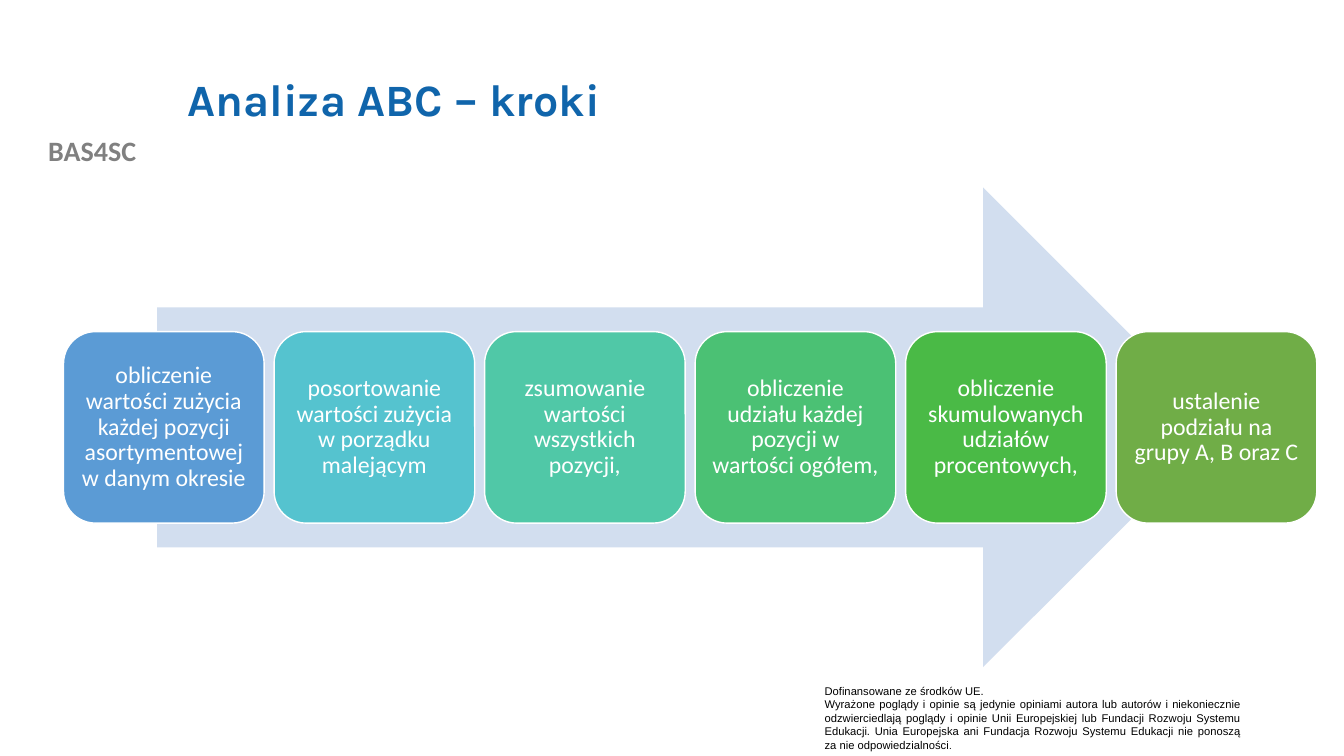
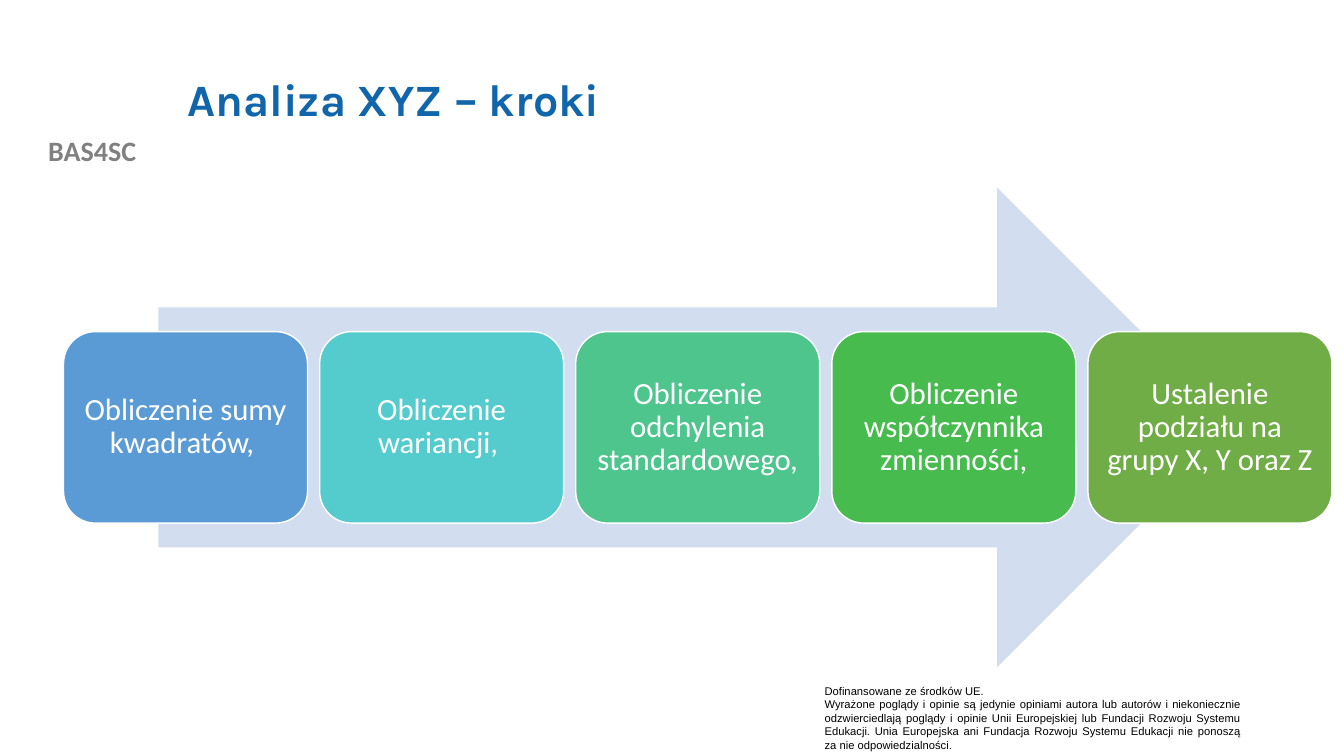
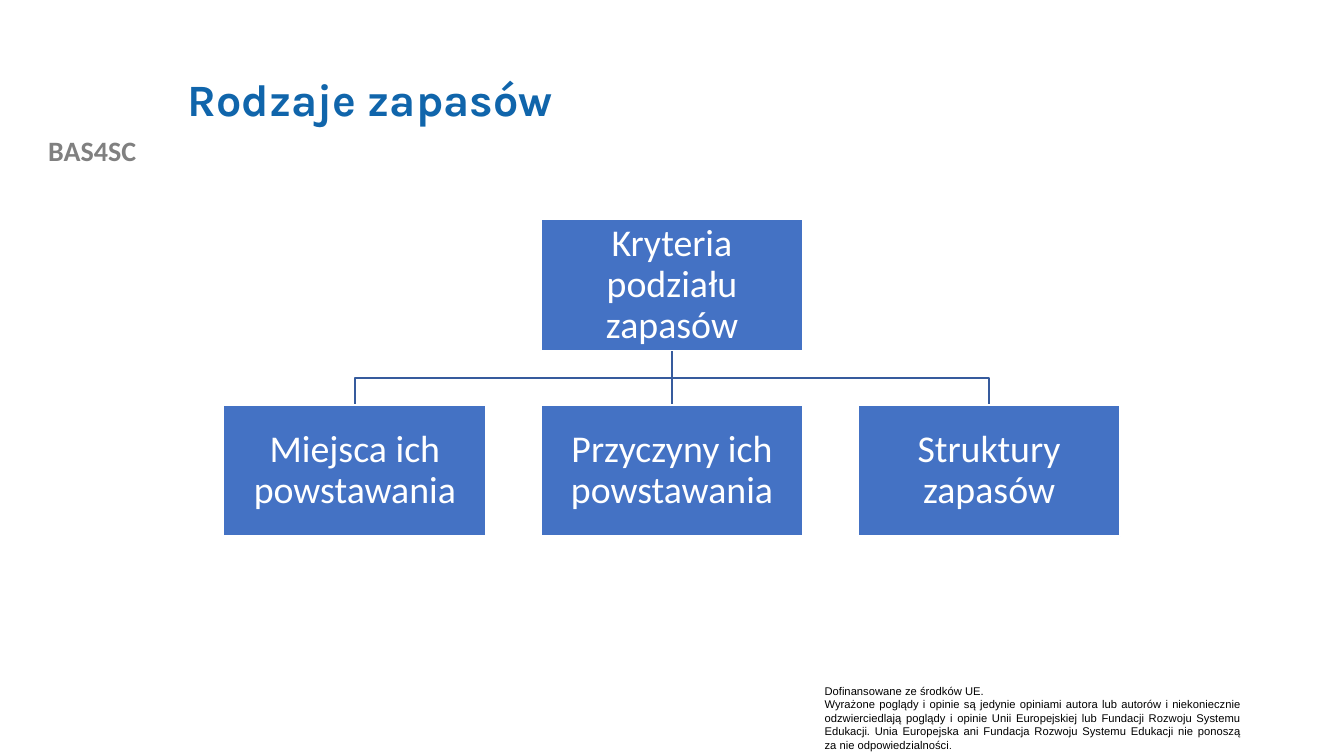
from lxml import etree
from pptx import Presentation
from pptx import util as u
from pptx.dml.color import RGBColor
from pptx.enum import shapes, text
from pptx.oxml.ns import qn

PX = 9144  # 100 px to the inch
WHITE, BLACK, GREY = "FFFFFF", "000000", "808080"
TITLE_BLUE, ARROW_BLUE, BOX_BLUE, LINE_BLUE = "1065AB", "D2DEEF", "4472C4", "365B9D"

PROJECT = "BAS4SC"
DISCLAIMER = [
    [("Dofinansowane ze środków UE.", 8)],
    [("Wyrażone poglądy i opinie są jedynie opiniami autora lub autorów i "
      "niekoniecznie odzwierciedlają poglądy i opinie Unii Europejskiej lub "
      "Fundacji Rozwoju Systemu Edukacji. Unia Europejska ani Fundacja Rozwoju "
      "Systemu Edukacji nie ponoszą za nie odpowiedzialności", 8), (".", 7)],
]

PROCESSES = [
    {
        "title": "Analiza ABC – kroki",
        "arrow": (156, 186, 1057, 476),
        "lefts": (63, 1107), "width": 199, "size": 17, "inset": 7,
        "steps": [
            ("obliczenie wartości zużycia każdej pozycji asortymentowej w danym okresie", "5B9BD5"),
            ("posortowanie wartości zużycia w porządku malejącym", "55C3CF"),
            ("zsumowanie wartości wszystkich pozycji,", "50C8A7"),
            ("obliczenie udziału każdej pozycji w wartości ogółem,", "4BC174"),
            ("obliczenie skumulowanych udziałów procentowych,", "4ABA46"),
            ("ustalenie podziału na grupy A, B oraz C", "70AD47"),
        ],
    },
    {
        "title": "Analiza XYZ – kroki",
        "arrow": (157, 186, 1070, 476),
        "lefts": (63, 1079), "width": 242, "size": 22, "inset": 9,
        "steps": [
            ("Obliczenie sumy kwadratów, ", "5B9BD5"),
            ("Obliczenie wariancji, ", "54CCCD"),
            ("Obliczenie odchylenia standardowego,", "4DC58D"),
            ("Obliczenie współczynnika zmienności,", "48BB4F"),
            ("Ustalenie podziału na grupy X, Y oraz Z", "70AD47"),
        ],
    },
]

TREE_TITLE = "Rodzaje zapasów"
TREE_ROOT = "Kryteria podziału zapasów"
TREE_LEAVES = ["Miejsca ich powstawania", "Przyczyny ich powstawania", "Struktury zapasów"]


def px(*lengths):
    return [round(length * PX) for length in lengths]


def rgb(value):
    return RGBColor.from_string(value)


def spread(first, last, count):
    """Evenly spaced positions from first to last."""
    return [first + (last - first) * i / (count - 1) for i in range(count)]


def write(frame, content, size=18, font="Calibri", color=WHITE, bold=False,
          align=text.PP_ALIGN.CENTER, anchor=text.MSO_ANCHOR.MIDDLE,
          spacing=None, inset=None):
    """Fill a frame with a string, or with paragraphs of (text, size) spans."""
    frame.word_wrap = True
    frame.auto_size = text.MSO_AUTO_SIZE.NONE
    frame.vertical_anchor = anchor
    if inset is not None:
        frame.margin_left = frame.margin_right = px(inset)[0]
        frame.margin_top = frame.margin_bottom = px(inset)[0]
    paragraphs = [[(content, size)]] if isinstance(content, str) else content
    for i, spans in enumerate(paragraphs):
        para = frame.add_paragraph() if i else frame.paragraphs[0]
        para.alignment = align
        if spacing:
            para.line_spacing = spacing
        for words, points in spans:
            span = para.add_run()
            span.text = words
            span.font.size = u.Pt(points)
            span.font.name = font
            span.font.bold = bold
            span.font.color.rgb = rgb(color)


def add_box(slide, kind, place, fill, line=None):
    box = slide.shapes.add_shape(kind, *px(*place))
    box.shadow.inherit = False
    box.fill.solid()
    box.fill.fore_color.rgb = rgb(fill)
    if line:
        box.line.color.rgb = rgb(line)
        box.line.width = u.Pt(1)
    else:
        box.line.fill.background()
    return box


def add_label(slide, place, content, **style):
    label = slide.shapes.add_textbox(*px(*place))
    write(label.text_frame, content, anchor=text.MSO_ANCHOR.TOP, **style)


def add_slide(deck, title):
    """A slide with the project name, the disclaimer and a title."""
    slide = deck.slides.add_slide(deck.slide_layouts[5])
    add_label(slide, (0, 128, 183, 44), PROJECT, size=20, color=GREY, bold=True)
    add_label(slide, (808, 674, 433, 77), DISCLAIMER, font="Arial", color=BLACK,
              align=text.PP_ALIGN.JUSTIFY)
    heading = slide.shapes.title
    heading.left, heading.top, heading.width, heading.height = px(176, 40, 1066, 122)
    write(heading.text_frame, title, size=32, font="Karla", color=TITLE_BLUE,
          bold=True, align=text.PP_ALIGN.LEFT, spacing=0.9)
    return slide


def add_process(deck, process):
    slide = add_slide(deck, process["title"])
    add_box(slide, shapes.MSO_SHAPE.RIGHT_ARROW, process["arrow"], ARROW_BLUE)
    steps = process["steps"]
    for left, (words, fill) in zip(spread(*process["lefts"], len(steps)), steps):
        box = add_box(slide, shapes.MSO_SHAPE.ROUNDED_RECTANGLE,
                      (left, 329, process["width"], 190), fill, WHITE)
        write(box.text_frame, words, size=process["size"], spacing=0.9,
              inset=process["inset"])


def add_branch(slide, start, end):
    """Join two points: a straight line if one is under the other, else a bent one."""
    (x1, y1), (x2, y2) = start, end
    if x1 == x2:
        branch = slide.shapes.add_connector(
            shapes.MSO_CONNECTOR.STRAIGHT, *px(x1, y1, x2, y2))
        etree.SubElement(branch._element.spPr, qn("a:effectLst"))
    else:
        middle = (y1 + y2) / 2
        outline = slide.shapes.build_freeform(*px(x1, y1), scale=1.0)
        corners = [(x1, middle), (x2, middle), (x2, y2)]
        outline.add_line_segments([px(*corner) for corner in corners], close=False)
        branch = outline.convert_to_shape()
        branch.shadow.inherit = False
        branch.fill.background()
    branch.line.color.rgb = rgb(LINE_BLUE)
    branch.line.width = u.Pt(1)


def add_tree(deck):
    slide = add_slide(deck, TREE_TITLE)
    width, height, root_top, leaf_top = 260, 130, 218, 402
    lefts = spread(222, 851, len(TREE_LEAVES))
    root_left = (lefts[0] + lefts[-1]) / 2
    for left in lefts:
        add_branch(slide, (root_left + width / 2, root_top + height),
                   (left + width / 2, leaf_top))
    nodes = [(TREE_ROOT, root_left, root_top)]
    nodes += [(words, left, leaf_top) for words, left in zip(TREE_LEAVES, lefts)]
    for words, left, top in nodes:
        box = add_box(slide, shapes.MSO_SHAPE.RECTANGLE, (left, top, width, height),
                      BOX_BLUE, WHITE)
        write(box.text_frame, words, size=27, spacing=0.9, inset=2)


def main():
    deck = Presentation()
    deck.slide_width, deck.slide_height = px(1333, 750)
    for process in PROCESSES:
        add_process(deck, process)
    add_tree(deck)
    deck.save("out.pptx")


if __name__ == "__main__":
    main()
